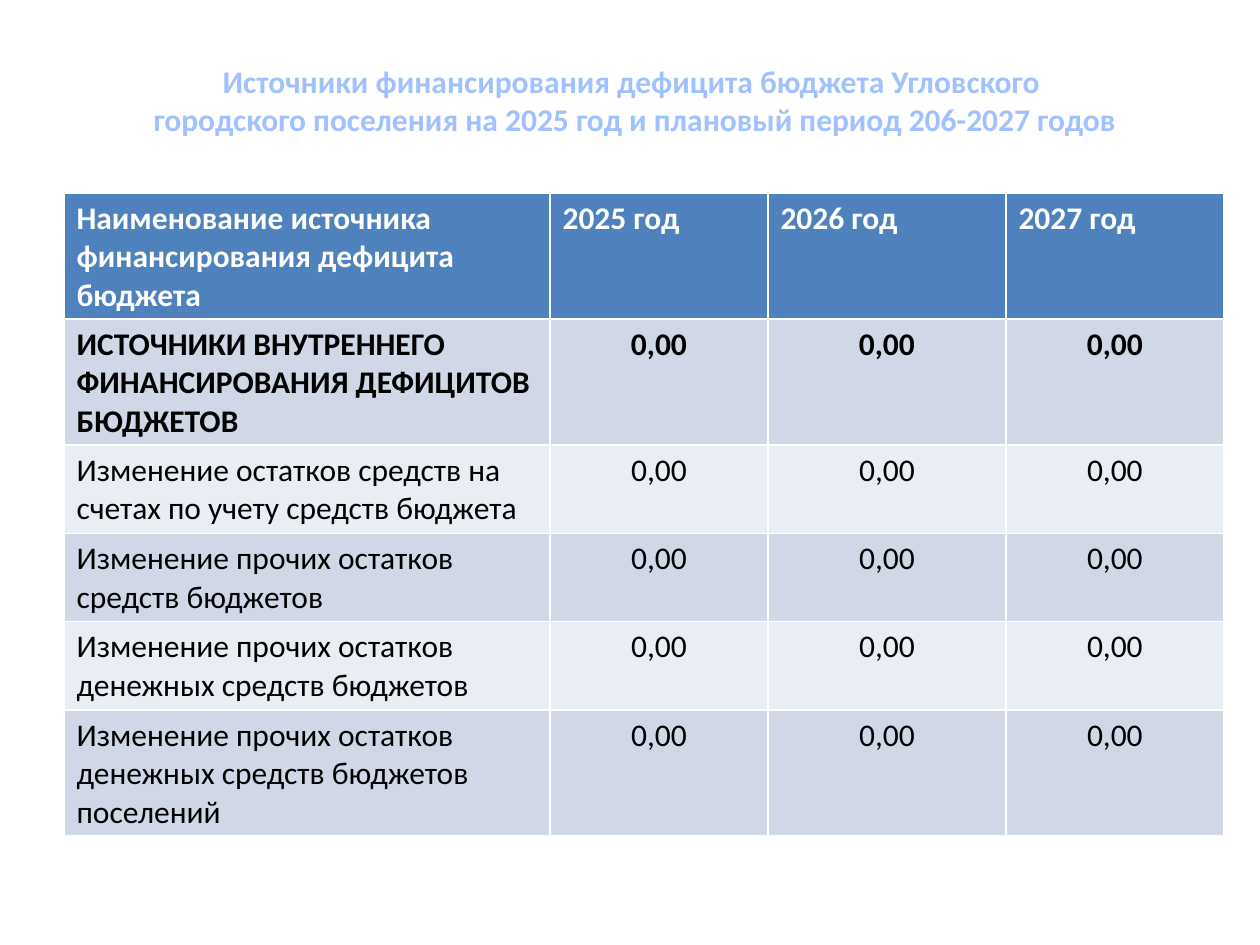
import pptx
import pptx.dml.color
import pptx.enum.text
import pptx.oxml
import pptx.oxml.ns
import pptx.util

SCALE = 914400 / 126
ALIGN = pptx.enum.text.PP_ALIGN


def px(length):
    return pptx.util.Emu(round(length * SCALE))


def color(value):
    return pptx.dml.color.RGBColor.from_string(value)


presentation = pptx.Presentation()
presentation.slide_width = px(1260)
presentation.slide_height = px(945)
slide = presentation.slides.add_slide(presentation.slide_layouts[6])

text_format = {"name": "Calibri", "size": pptx.util.Pt(18)}
title_lines = [
    "Источники финансирования дефицита бюджета Угловского ",
    "городского поселения на 2025 год и плановый период 206-2027 годов",
]
gradient_stops = [(0, "BFD3F9"), (9, "A0C1FF"), (50, "003D85"), (79, "A0C1FF"), (100, "BFD3F9")]
stops_xml = "".join(
    f'<a:gs pos="{position * 1000}"><a:srgbClr val="{value}"/></a:gs>'
    for position, value in gradient_stops
)
namespace = pptx.oxml.ns.nsdecls("a")
outline_xml = f'<a:ln {namespace} w="10541"><a:solidFill><a:srgbClr val="467AB8"/></a:solidFill></a:ln>'
gradient_xml = f'<a:gradFill {namespace}><a:gsLst>{stops_xml}</a:gsLst><a:lin ang="5400000"/></a:gradFill>'

title = slide.shapes.add_textbox(px(64), px(56), px(1142), px(89))
title.text_frame.word_wrap = True
title.text_frame.auto_size = pptx.enum.text.MSO_AUTO_SIZE.SHAPE_TO_FIT_TEXT
title.text_frame.text = "\n".join(title_lines)
for paragraph in title.text_frame.paragraphs:
    paragraph.alignment = ALIGN.CENTER
    font = paragraph.runs[0].font
    for name, value in {**text_format, "bold": True}.items():
        setattr(font, name, value)
    properties = paragraph.runs[0].font._element
    for index, xml in enumerate([outline_xml, gradient_xml]):
        properties.insert(index, pptx.oxml.parse_xml(xml))

column_widths = [486, 218, 238, 218]
row_heights = [126, 126, 88, 88, 88, 126]
sources = [
    "ИСТОЧНИКИ ВНУТРЕННЕГО ФИНАНСИРОВАНИЯ ДЕФИЦИТОВ БЮДЖЕТОВ",
    "Изменение остатков средств на счетах по учету средств бюджета",
    "Изменение прочих остатков средств бюджетов",
    "Изменение прочих остатков денежных средств бюджетов",
    "Изменение прочих остатков денежных средств бюджетов поселений",
]
header = ["Наименование источника финансирования дефицита бюджета"]
header += [f"{year} год" for year in (2025, 2026, 2027)]
rows = [header] + [[source] + ["0,00"] * 3 for source in sources]

table = slide.shapes.add_table(
    len(rows), len(column_widths), px(64), px(193), px(sum(column_widths)), px(sum(row_heights))
).table
for column, width in zip(table.columns, column_widths):
    column.width = px(width)
for row_index, (values, height) in enumerate(zip(rows, row_heights)):
    table.rows[row_index].height = px(height)
    is_header = row_index == 0
    band = "D0D8E8" if row_index % 2 else "E9EDF4"
    for column_index, value in enumerate(values):
        cell = table.cell(row_index, column_index)
        cell.text = value
        cell.fill.solid()
        cell.fill.fore_color.rgb = color("4F81BD" if is_header else band)
        paragraph = cell.text_frame.paragraphs[0]
        paragraph.alignment = ALIGN.LEFT if is_header or column_index == 0 else ALIGN.CENTER
        font = paragraph.runs[0].font
        for name, setting in {**text_format, "bold": row_index < 2}.items():
            setattr(font, name, setting)
        font.color.rgb = color("FFFFFF" if is_header else "000000")

presentation.save("out.pptx")
